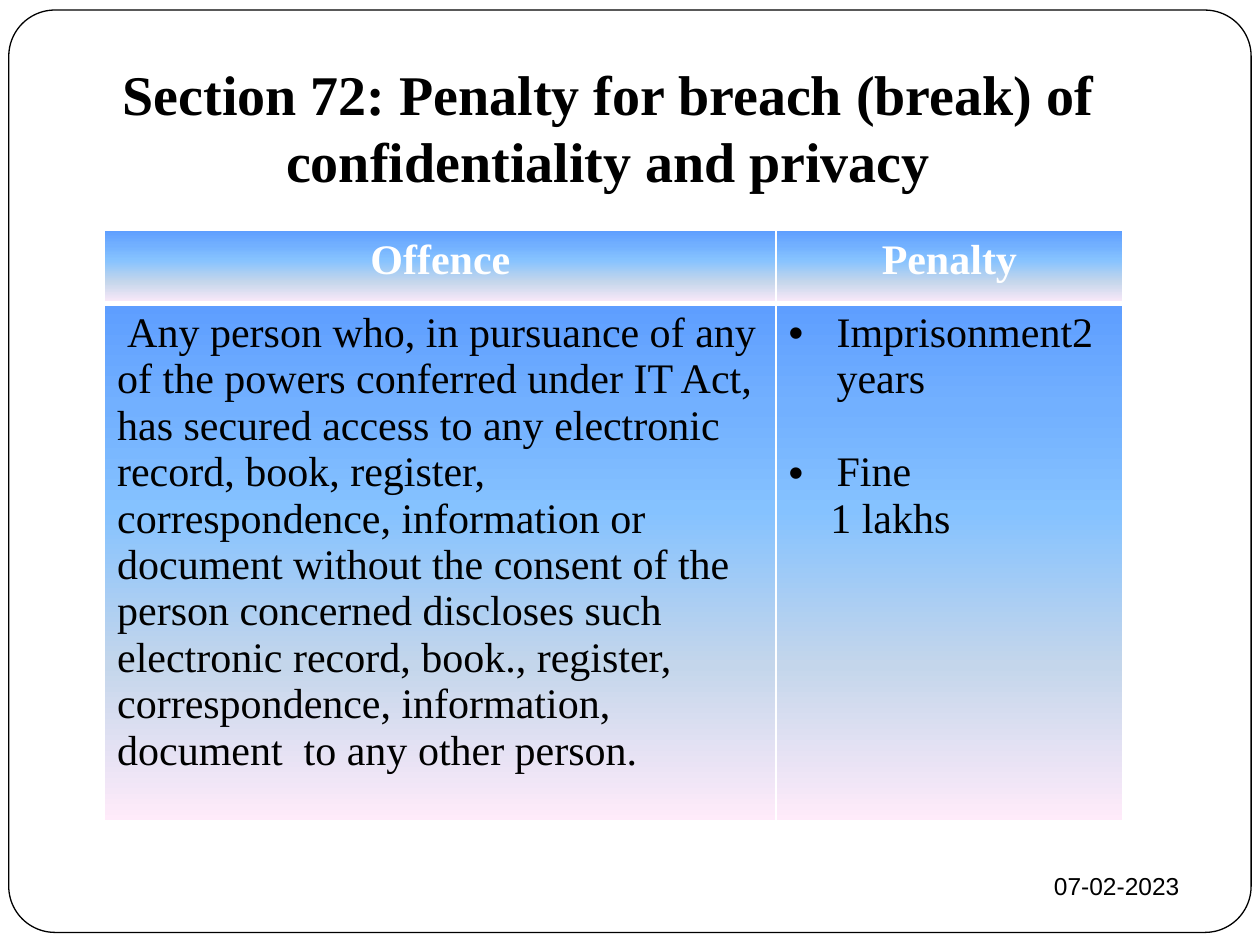
from lxml import etree
from pptx import Presentation
from pptx.dml.color import RGBColor
from pptx.enum.shapes import MSO_SHAPE
from pptx.enum.text import MSO_ANCHOR, MSO_AUTO_SIZE, PP_ALIGN
from pptx.oxml.ns import qn
from pptx.util import Inches, Pt

ROUND = MSO_SHAPE.ROUNDED_RECTANGLE
BOTTOM, MIDDLE = MSO_ANCHOR.BOTTOM, MSO_ANCHOR.MIDDLE
LEFT, CENTER, RIGHT = PP_ALIGN.LEFT, PP_ALIGN.CENTER, PP_ALIGN.RIGHT
FIXED = MSO_AUTO_SIZE.NONE

BLACK, WHITE = "000000", "FFFFFF"
SERIF, SANS = "Times New Roman", "Arial"
STOPS = [(0, "5E9EFF"), (20, "72B0FF"), (40, "85C2FF"),
         (70, "C4D6EB"), (100, "FFEBFA")]
OFFENCE = (
    "Any person who, in pursuance of any of the powers conferred under "
    "IT Act, has secured access to any electronic record, book, register, "
    "correspondence, information or document without the consent of the "
    "person concerned discloses such electronic record, book., register, "
    "correspondence, information, document  to any other person."
)


def color(code):
    return RGBColor.from_string(code)


def place(shape, left, top, width, height):
    shape.left, shape.top = Inches(left), Inches(top)
    shape.width, shape.height = Inches(width), Inches(height)


def style(para, size, face=SERIF, tint=BLACK, bold=False, align=LEFT):
    para.alignment = align
    font = para.font
    font.size, font.name, font.bold = Pt(size), face, bold
    font.color.rgb = color(tint)


def node(parent, tag, **attrs):
    child = etree.SubElement(parent, qn(tag))
    for key, value in attrs.items():
        child.set(key, str(value))
    return child


def indent(para, margin, first):
    props = para._p.get_or_add_pPr()
    props.set("marL", str(Inches(margin)))
    props.set("indent", str(Inches(first)))
    return props


def bullet(para):
    props = indent(para, 0.38, -0.38)
    node(props, "a:buFont", typeface=SANS)
    node(props, "a:buChar", char="•")


def paint(cell, base):
    props = cell._tc.get_or_add_tcPr()
    for tag, width in (("a:lnL", 1), ("a:lnR", 1), ("a:lnT", 1), ("a:lnB", base)):
        line = node(props, tag, w=Pt(width))
        node(node(line, "a:solidFill"), "a:srgbClr", val=WHITE)
    grad = node(props, "a:gradFill", rotWithShape=1)
    stops = node(grad, "a:gsLst")
    for spot, code in STOPS:
        node(node(stops, "a:gs", pos=spot * 1000), "a:srgbClr", val=code)
    node(grad, "a:lin", ang=5400000, scaled=0)


def add_frame(slide):
    frame = slide.shapes.add_shape(
        ROUND, Inches(0.07), Inches(0.08), Inches(9.86), Inches(7.32))
    frame.adjustments[0] = 0.05
    frame.shadow.inherit = False
    frame.fill.solid()
    frame.fill.fore_color.rgb = color(WHITE)
    frame.line.color.rgb = color(BLACK)
    frame.line.width = Pt(0.75)
    frame.element.getparent().insert(2, frame.element)


def add_title(slide, text):
    title = slide.shapes.title
    place(title, 0.33, 0.58, 9, 1.06)
    frame = title.text_frame
    frame.text = text
    frame.word_wrap, frame.auto_size = True, FIXED
    frame.vertical_anchor = BOTTOM
    frame.margin_bottom = Inches(0.1)
    style(frame.paragraphs[0], 32, bold=True, align=CENTER)


def add_date(slide, text):
    box = slide.shapes.add_textbox(
        Inches(6.75), Inches(6.77), Inches(2.71), Inches(0.52))
    frame = box.text_frame
    frame.text = text
    frame.word_wrap = True
    frame.vertical_anchor = MIDDLE
    style(frame.paragraphs[0], 14, face=SANS, align=RIGHT)


def fill_cell(cell, lines, **look):
    frame = cell.text_frame
    frame.text = "\n".join(lines)
    for para in frame.paragraphs:
        style(para, 24, **look)
    return frame.paragraphs


def add_table(slide):
    table = slide.shapes.add_table(
        2, 2, Inches(0.83), Inches(1.83), Inches(8.08), Inches(3.94)).table
    for column, width in zip(table.columns, (5.33, 2.75)):
        column.width = Inches(width)
    for row, height in zip(table.rows, (0.58, 3.36)):
        row.height = Inches(height)
    for cell, text in zip(table.rows[0].cells, ("Offence", "Penalty")):
        fill_cell(cell, [text], tint=WHITE, bold=True, align=CENTER)
        paint(cell, 3)
    for cell in table.rows[1].cells:
        paint(cell, 1)
    (act,) = fill_cell(table.cell(1, 0), [OFFENCE])
    indent(act, 0, 0.08)
    jail, fine, sum_ = fill_cell(
        table.cell(1, 1), ["Imprisonment2 years", "Fine", "1 lakhs"])
    fine.space_before = Pt(26.6)
    bullet(jail)
    bullet(fine)
    indent(sum_, 0.33, 0)


def main():
    deck = Presentation()
    deck.slide_width, deck.slide_height = Inches(10), Inches(7.5)
    slide = deck.slides.add_slide(deck.slide_layouts[5])
    add_frame(slide)
    add_title(slide, "Section 72: Penalty for breach (break) of "
                     "confidentiality and privacy")
    add_date(slide, "07-02-2023")
    add_table(slide)
    deck.save("out.pptx")


if __name__ == "__main__":
    main()
